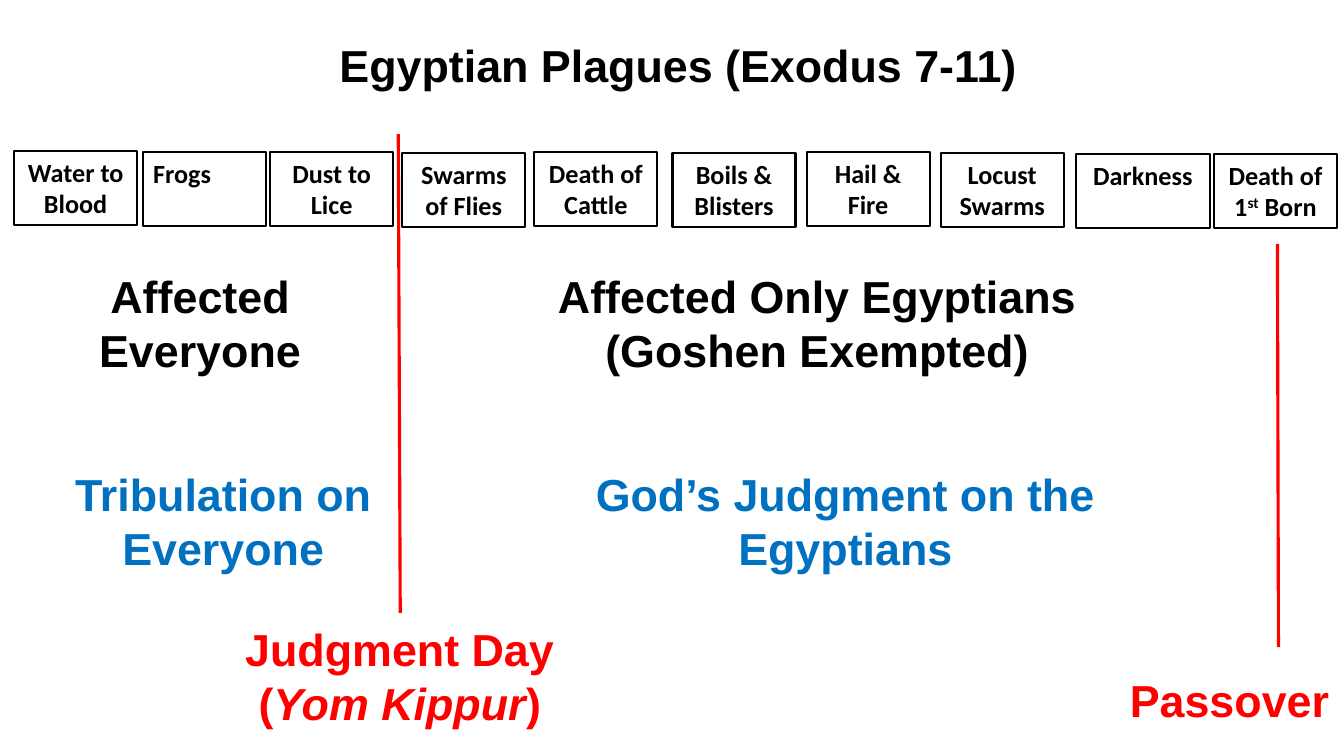
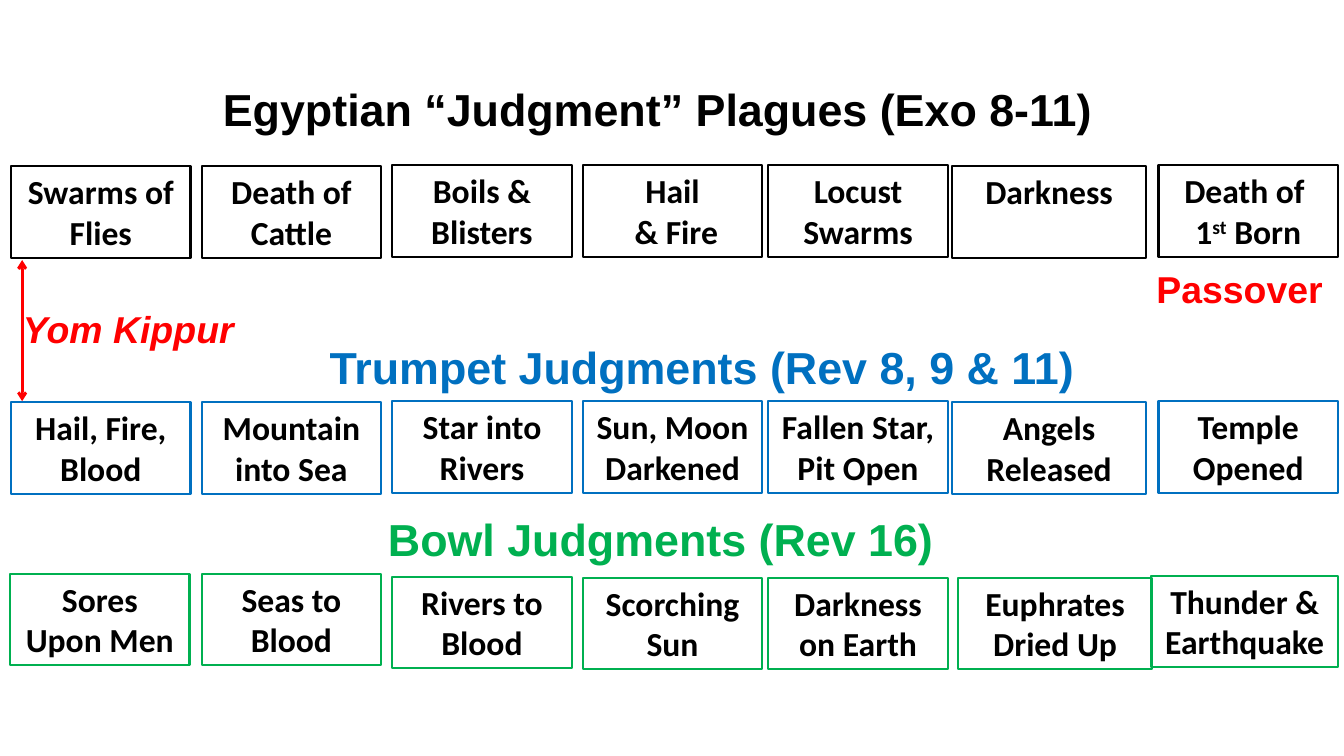
from lxml.etree import SubElement
from pptx import Presentation
from pptx.dml.color import RGBColor
from pptx.enum.shapes import MSO_CONNECTOR, MSO_SHAPE
from pptx.enum.text import MSO_ANCHOR, PP_ALIGN
from pptx.oxml.ns import qn
from pptx.util import Pt

PX = 9144  # 100 px to the inch
BLACK = RGBColor(0x00, 0x00, 0x00)
RED = RGBColor(0xFF, 0x00, 0x00)
BLUE = RGBColor(0x00, 0x70, 0xC0)
GREEN = RGBColor(0x00, 0xB0, 0x50)
HEADING, BOX_FONT = "Arial", "Calibri"
LEFT, CENTER, RIGHT = PP_ALIGN.LEFT, PP_ALIGN.CENTER, PP_ALIGN.RIGHT
FIRST_BORN = [("1", ""), ("st", "raised"), (" Born", "")]


def add_text(page, area, paragraphs, size, color=BLACK, align=CENTER, outline=None):
    """Bold text; an outline colour makes it a framed box. A paragraph is a string or a list of runs."""
    area = [length * PX for length in area]
    if outline is None:
        box = page.shapes.add_textbox(*area)
    else:
        box = page.shapes.add_shape(MSO_SHAPE.RECTANGLE, *area)
        box.shadow.inherit = False
        box.fill.background()
        box.line.color.rgb = outline
        box.line.width = Pt(1.5)
    frame = box.text_frame
    frame.word_wrap = True
    frame.vertical_anchor = MSO_ANCHOR.TOP
    for index, runs in enumerate(paragraphs):
        para = frame.add_paragraph() if index else frame.paragraphs[0]
        para.alignment = align
        for text, style in [(runs, "")] if isinstance(runs, str) else runs:
            span = para.add_run()
            span.text = text
            span.font.name = BOX_FONT if outline is not None else HEADING
            span.font.size = Pt(size)
            span.font.bold = True
            span.font.color.rgb = color
            if style == "italic":
                span.font.italic = True
            elif style == "raised":
                span._r.get_or_add_rPr().set("baseline", "30000")


def add_line(page, ends, width, arrows=False):
    line = page.shapes.add_connector(MSO_CONNECTOR.STRAIGHT, *[length * PX for length in ends])
    line.line.color.rgb = RED
    line.line.width = Pt(width)
    if arrows:
        outline = line.line._get_or_add_ln()
        for end in ("a:headEnd", "a:tailEnd"):
            SubElement(outline, qn(end)).set("type", "arrow")
    SubElement(line._element.spPr, qn("a:effectLst"))


deck = Presentation()
deck.slide_width, deck.slide_height = 1333 * PX, 750 * PX
blank = deck.slide_layouts[6]

# Slide 1: the ten plagues
page = deck.slides.add_slide(blank)
add_text(page, (301, 33, 744, 64), ["Egyptian Plagues (Exodus 7-11)"], 32)
plagues = [
    (14, 150, 122, ["Water to Blood"], CENTER),
    (142, 151, 122, ["Frogs"], LEFT),
    (268, 151, 122, ["Dust to Lice"], CENTER),
    (399, 152, 122, ["Swarms of Flies"], CENTER),
    (530, 151, 122, ["Death of Cattle"], CENTER),
    (667, 152, 122, ["Boils & Blisters"], CENTER),
    (800, 151, 122, ["Hail & Fire"], CENTER),
    (933, 152, 122, ["Locust Swarms"], CENTER),
    (1067, 153, 133, ["Darkness"], CENTER),
    (1204, 153, 122, ["Death of", FIRST_BORN], CENTER),
]
for left, top, width, label, align in plagues:
    add_text(page, (left, top, width, 73), label, 18.7, align=align, outline=BLACK)

# Dividing lines and what each span means
add_line(page, (395, 133, 397, 608), 2.25)
add_line(page, (1267, 242, 1268, 642), 2.25)
yom_kippur = [("Judgment Day (", ""), ("Yom Kippur", "italic"), (")", "")]
captions = [
    ((32, 262, 333, 118), ["Affected Everyone"], BLACK),
    ((521, 262, 579, 118), ["Affected Only Egyptians", "(Goshen Exempted)"], BLACK),
    ((55, 458, 333, 118), ["Tribulation on Everyone"], BLUE),
    ((544, 458, 589, 118), ["God’s Judgment on the Egyptians"], BLUE),
    ((230, 612, 333, 118), [yom_kippur], RED),
    ((1097, 662, 245, 64), ["Passover"], RED),
]
for area, paragraphs, color in captions:
    add_text(page, area, paragraphs, 32, color)

# Slide 2: three rows of seven judgments
page = deck.slides.add_slide(blank)
columns = [(11, 178), (200, 178), (389, 178), (578, 178), (762, 178), (944, 193), (1149, 178)]
bowl_columns = [(10, 178)] + columns[1:5] + [(950, 193), (1142, 185)]
rows = [
    ("Egyptian “Judgment” Plagues (Exo 8-11)", (119, 76, 1067, 64), BLACK, columns,
     (165, 165, 164, 164, 164, 165, 164),
     (["Swarms of Flies"], ["Death of Cattle"], ["Boils & Blisters"], ["Hail", " & Fire"],
      ["Locust Swarms"], ["Darkness"], ["Death of ", FIRST_BORN])),
    ("Trumpet Judgments (Rev 8, 9 & 11)", (289, 332, 815, 64), BLUE, columns,
     (399, 399, 398, 398, 398, 399, 398),
     (["Hail, Fire, Blood"], ["Mountain into Sea"], ["Star into Rivers"], ["Sun, Moon Darkened"],
      ["Fallen Star, Pit Open"], ["Angels Released"], ["Temple Opened"])),
    ("Bowl Judgments (Rev 16)", (289, 503, 733, 64), GREEN, bowl_columns,
     (569, 569, 572, 573, 573, 573, 571),
     (["Sores", "Upon Men"], ["Seas to Blood"], ["Rivers to Blood"], ["Scorching Sun"],
      ["Darkness on Earth"], ["Euphrates Dried Up"], ["Thunder &", "Earthquake"])),
]
for heading, area, color, places, tops, labels in rows:
    add_text(page, area, [heading], 32, color)
    for (left, width), top, label in zip(places, tops, labels):
        add_text(page, (left, top, width, 91), label, 24, outline=color)

# Feast days
add_line(page, (22, 258, 22, 398), 2, arrows=True)
add_text(page, (1078, 259, 244, 55), ["Passover"], 26.7, RED, RIGHT)
add_text(page, (13, 299, 244, 55), [[("Yom Kippur", "italic")]], 26.7, RED, LEFT)

deck.save("out.pptx")
